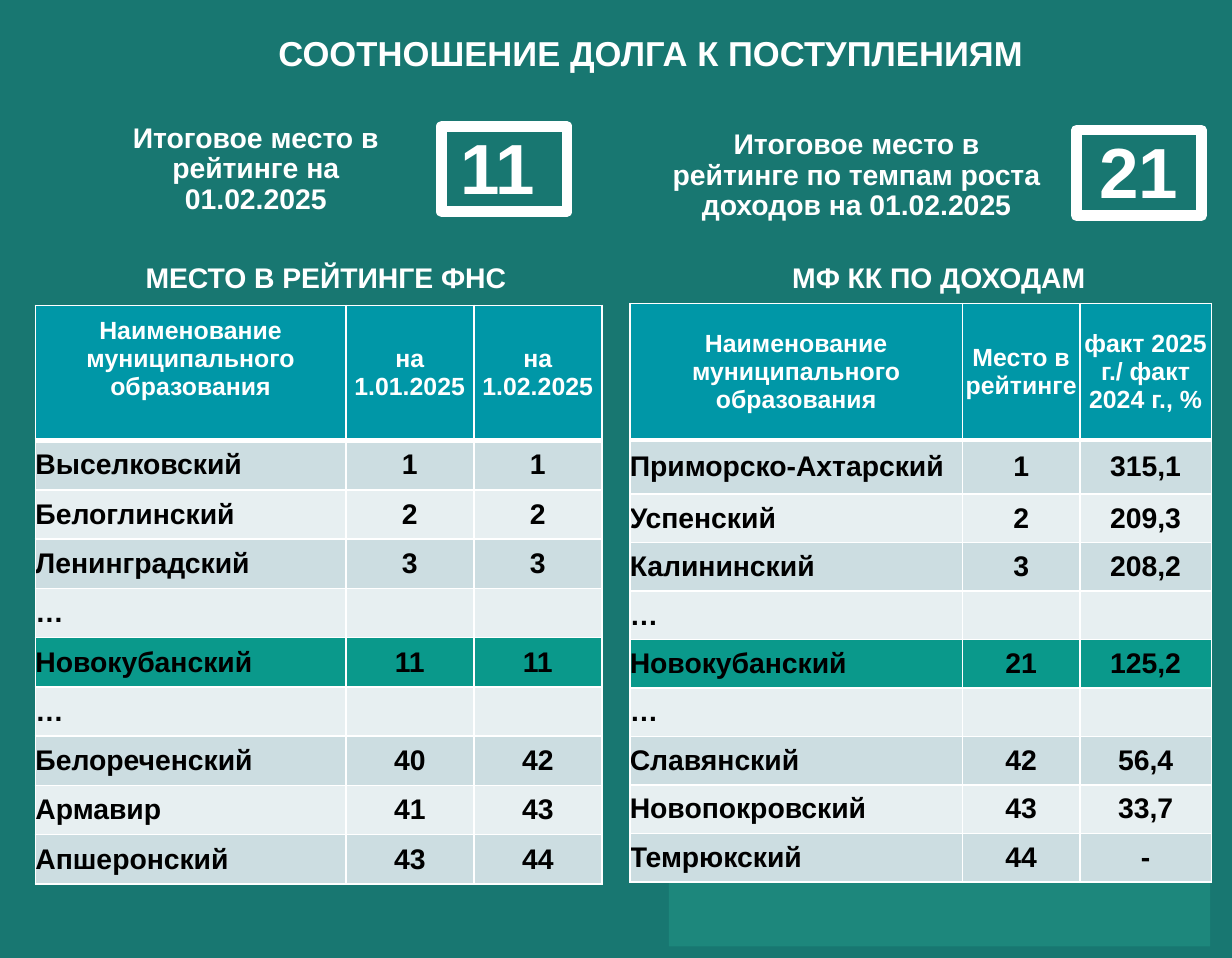
from lxml import etree
from pptx import Presentation
from pptx.dml.color import RGBColor
from pptx.enum.shapes import MSO_SHAPE
from pptx.enum.text import MSO_ANCHOR, MSO_AUTO_SIZE, PP_ALIGN
from pptx.oxml.ns import qn
from pptx.util import Pt

RECTANGLE = MSO_SHAPE.RECTANGLE
MIDDLE = MSO_ANCHOR.MIDDLE
NO_AUTOFIT = MSO_AUTO_SIZE.NONE
LEFT, CENTER = PP_ALIGN.LEFT, PP_ALIGN.CENTER

FONT = "Arial"
WHITE, BLACK = "FFFFFF", "000000"
BACKGROUND, ACCENT = "187771", "1D877C"
HEADER, HIGHLIGHT = "0097A7", "0A998B"
BANDS = ["E7EFF1", "CCDDE1"]
OWN_DISTRICT = "Новокубанский"

TAX_SERVICE_ROWS = [
    ["Наименование муниципального образования", "на 1.01.2025", "на 1.02.2025"],
    ["Выселковский", "1", "1"],
    ["Белоглинский", "2", "2"],
    ["Ленинградский", "3", "3"],
    ["…", "", ""],
    [OWN_DISTRICT, "11", "11"],
    ["…", "", ""],
    ["Белореченский", "40", "42"],
    ["Армавир", "41", "43"],
    ["Апшеронский", "43", "44"],
]
INCOME_ROWS = [
    ["Наименование муниципального образования", "Место в рейтинге",
     "факт 2025 г./ факт 2024 г., %"],
    ["Приморско-Ахтарский", "1", "315,1"],
    ["Успенский", "2", "209,3"],
    ["Калининский", "3", "208,2"],
    ["…", "", ""],
    [OWN_DISTRICT, "21", "125,2"],
    ["…", "", ""],
    ["Славянский", "42", "56,4"],
    ["Новопокровский", "43", "33,7"],
    ["Темрюкский", "44", "-"],
]


def color(value):
    return RGBColor.from_string(value)


def paint(fill, value):
    fill.solid()
    fill.fore_color.rgb = color(value)


def write(frame, text, size, text_color=WHITE, align=CENTER, spacing=None):
    paragraph = frame.paragraphs[0]
    paragraph.alignment = align
    if spacing:
        paragraph.line_spacing = spacing
    run = paragraph.add_run()
    run.text = text
    run.font.name = FONT
    run.font.size = Pt(size)
    run.font.bold = True
    run.font.color.rgb = color(text_color)


def set_margins(target, horizontal, vertical):
    target.margin_left = target.margin_right = Pt(horizontal)
    target.margin_top = target.margin_bottom = Pt(vertical)


def place(shape, left, top, width, height):
    shape.left, shape.top = Pt(left), Pt(top)
    shape.width, shape.height = Pt(width), Pt(height)


def fill_heading(shape, text, size):
    frame = shape.text_frame
    frame.word_wrap = True
    frame.auto_size = NO_AUTOFIT
    frame.vertical_anchor = MIDDLE
    set_margins(frame, 5, 3)
    write(frame, text, size, spacing=0.9)


def add_heading(slide, text, left, top, width):
    box = slide.shapes.add_textbox(Pt(left), Pt(top), Pt(width), Pt(46))
    fill_heading(box, text, 16)


def add_rectangle(slide, left, top, width, height, fill=None, line=None):
    shape = slide.shapes.add_shape(RECTANGLE, Pt(left), Pt(top), Pt(width), Pt(height))
    shape.shadow.inherit = False
    if fill:
        paint(shape.fill, fill)
    else:
        shape.fill.background()
    if line:
        shape.line.color.rgb = color(line)
        shape.line.width = Pt(6)
    else:
        shape.line.fill.background()


def add_place_number(slide, text, text_left, text_width, frame_left, top):
    box = slide.shapes.add_textbox(Pt(text_left), Pt(top), Pt(text_width), Pt(55.4))
    box.text_frame.word_wrap = True
    write(box.text_frame, text, 40)
    add_rectangle(slide, frame_left, top + 5, 70.6, 48.2, line=WHITE)


def set_borders(cell, top, bottom):
    properties = cell._tc.get_or_add_tcPr()
    for side, width in (("L", 1), ("R", 1), ("T", top), ("B", bottom)):
        line = etree.SubElement(properties, qn(f"a:ln{side}"), w=str(Pt(width)))
        fill = etree.SubElement(line, qn("a:solidFill"))
        etree.SubElement(fill, qn("a:srgbClr"), val=WHITE)


def row_color(index, name):
    if index == 0:
        return HEADER
    return HIGHLIGHT if name == OWN_DISTRICT else BANDS[index % 2]


def add_rating_table(slide, rows, left, top, widths, heights):
    frame = slide.shapes.add_table(len(rows), len(widths), Pt(left), Pt(top),
                                   Pt(sum(widths)), Pt(sum(heights)))
    table = frame.table
    table.first_row = table.horz_banding = False
    for column, width in zip(table.columns, widths):
        column.width = Pt(width)
    for index, (values, height) in enumerate(zip(rows, heights)):
        table.rows[index].height = Pt(height)
        is_header = index == 0
        for position, value in enumerate(values):
            cell = table.cell(index, position)
            set_margins(cell, 0, 0)
            cell.vertical_anchor = MIDDLE
            set_borders(cell, 3 if index == 1 else 1, 3 if is_header else 1)
            paint(cell.fill, row_color(index, values[0]))
            if value:
                align = CENTER if is_header or position else LEFT
                write(cell.text_frame, value, 14 if is_header else 16,
                      WHITE if is_header else BLACK, align)
    return table


def main():
    presentation = Presentation()
    presentation.slide_width, presentation.slide_height = Pt(694.8), Pt(540)
    slide = presentation.slides.add_slide(presentation.slide_layouts[5])
    paint(slide.background.fill, BACKGROUND)

    # Title and corner panel
    title = slide.shapes.title
    place(title, 51.8, 7.9, 630.7, 46)
    fill_heading(title, "СООТНОШЕНИЕ ДОЛГА К ПОСТУПЛЕНИЯМ", 19.5)
    add_rectangle(slide, 377.3, 418.3, 305.3, 115.2, fill=ACCENT)

    # Final places
    add_heading(slide, "Итоговое место в рейтинге на 01.02.2025", 51.8, 72.7, 185)
    add_heading(slide, "Итоговое место в рейтинге по темпам роста доходов на 01.02.2025",
                371.5, 76.3, 223.2)
    add_place_number(slide, "11", 247.7, 66.2, 249.1, 66.2)
    add_place_number(slide, "21", 607, 70.6, 607, 68.4)

    # Rating tables
    tax_table = add_rating_table(slide, TAX_SERVICE_ROWS, 20, 172.1,
                                 [175, 72.2, 72.2], [76.2] + [27.8] * 9)
    tax_table.cell(0, 0).margin_bottom = Pt(16)
    add_rating_table(slide, INCOME_ROWS, 355.2, 171.2,
                     [187.6, 66.2, 74.2], [76.8, 30.5] + [27.35] * 8)
    add_heading(slide, "МЕСТО В РЕЙТИНГЕ ФНС", 48.2, 134.6, 271.4)
    add_heading(slide, "МФ КК ПО ДОХОДАМ", 393.8, 134.6, 271.4)

    presentation.save("out.pptx")


if __name__ == "__main__":
    main()
